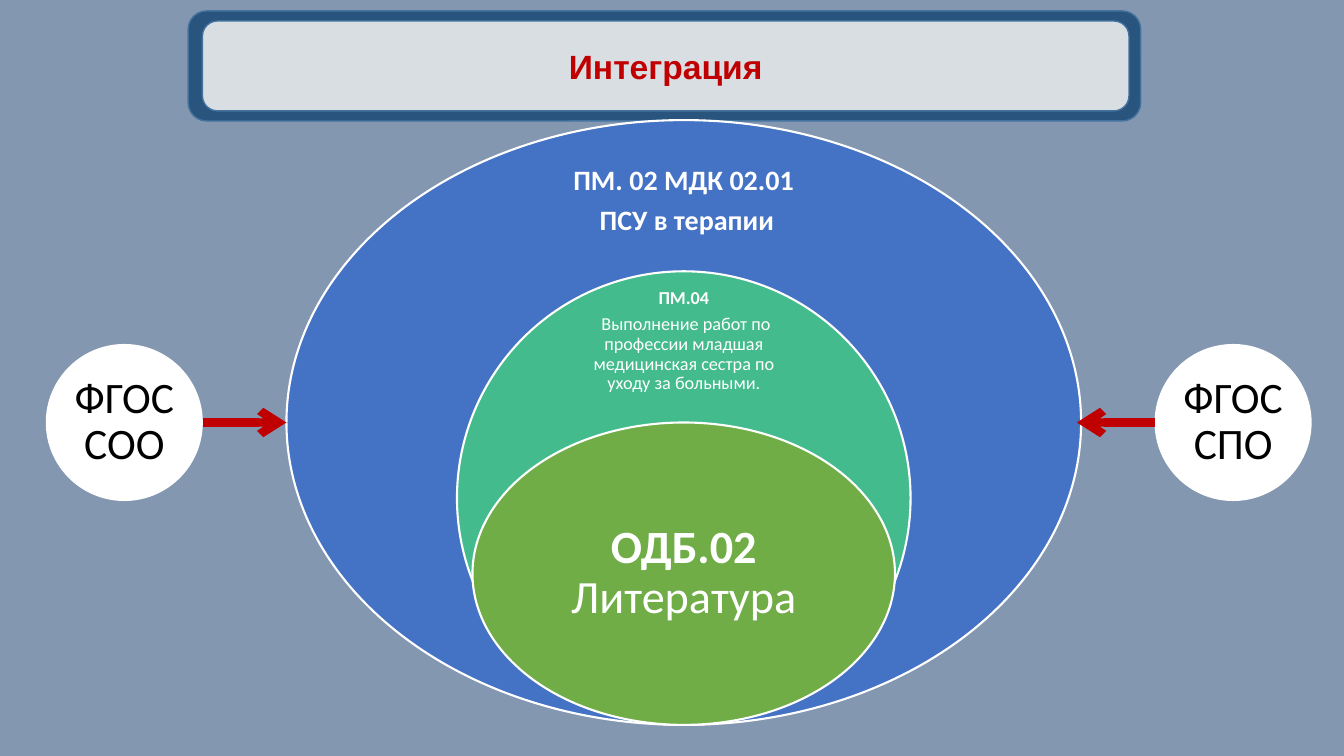
from dataclasses import dataclass

from pptx import Presentation, util as u
from pptx.dml.color import RGBColor
from pptx.enum import shapes, text
from pptx.oxml.ns import qn
from lxml import etree


@dataclass(frozen=True)
class Theme:
    background: str = "8497B0"
    frame: str = "1F4E79"
    panel: str = "F2F2F2"
    frame_line: str = "43739E"
    accent: str = "C00000"
    white: str = "FFFFFF"
    black: str = "000000"
    blue: str = "4472C4"
    teal: str = "43BB8D"
    green: str = "70AD47"
    title_font: str = "Arial"
    body_font: str = "Calibri"
    title_size: int = 24
    outer_size: int = 20
    middle_size: int = 13
    inner_size: int = 33
    standard_size: int = 31


theme = Theme()
COLUMNS, ROWS = 160, 90
CENTER, BOTTOM = 81.4, 86.3
CIRCLE, LABEL = 18.7, 13.2

TITLE = "Интеграция"
FRAME = (22.4, 1.3, 113.4, 13.1)
PANEL = (24.1, 2.5, 110.3, 10.7)
RINGS = [
    dict(width=94.6, height=72, fill=theme.blue, label=(17.9, 33.1, 10.8),
         size=theme.outer_size, inset=1.9, anchor="TOP",
         paras=[[("ПМ. 02 МДК 02.01", True)], [(" ПСУ в терапии", True)]]),
    dict(width=54, height=54, fill=theme.teal, label=(35.6, 25.2, 10.1),
         size=theme.middle_size, inset=1.2, anchor="MIDDLE",
         paras=[[("ПМ.04", True)],
                [(" ", True), ("Выполнение работ по профессии младшая "
                               "медицинская сестра по уходу за больными.", False)]]),
    dict(width=50.3, height=36, fill=theme.green, label=(59.3, 35.6, 18),
         size=theme.inner_size, inset=3.1, anchor="MIDDLE",
         paras=[[("ОДБ.02", True), (" Литература", False)]]),
]
STANDARDS = [
    dict(name="ФГОС СОО", center=14.8, side=1, tip=34.1),
    dict(name="ФГОС СПО", center=146.8, side=-1, tip=128.2),
]

deck = Presentation()
deck.slide_width, deck.slide_height = u.Inches(13.33), u.Inches(7.5)
page = deck.slides.add_slide(deck.slide_layouts[5])
page.background.fill.solid()
page.background.fill.fore_color.rgb = RGBColor.from_string(theme.background)


def place(left, top, width, height):
    across, down = deck.slide_width / COLUMNS, deck.slide_height / ROWS
    return [round(v) for v in (left * across, top * down, width * across, height * down)]


def centered(x, y, width, height):
    return x - width / 2, y - height / 2, width, height


def draw(kind, area, fill, line=None, weight=1, opacity=100):
    shape = page.shapes.add_shape(kind, *place(*area))
    shape.shadow.inherit = False
    shape.fill.solid()
    shape.fill.fore_color.rgb = RGBColor.from_string(fill)
    if opacity < 100:
        color = shape._element.spPr.find(qn("a:solidFill"))[0]
        etree.SubElement(color, qn("a:alpha"), val=str(opacity * 1000))
    if line:
        shape.line.color.rgb = RGBColor.from_string(line)
        shape.line.width = u.Pt(weight)
    else:
        shape.line.fill.background()
    return shape


def write(box, paras, *, size, color, inset, font=theme.body_font,
          anchor="MIDDLE", spacing=0.9, after=0.35):
    frame = box.text_frame
    frame.word_wrap = True
    frame.auto_size = text.MSO_AUTO_SIZE.NONE
    frame.vertical_anchor = text.MSO_ANCHOR[anchor]
    margin = place(inset, 0, 0, 0)[0]
    frame.margin_left = frame.margin_right = margin
    frame.margin_top = frame.margin_bottom = margin
    for index, spans in enumerate(paras):
        para = frame.add_paragraph() if index else frame.paragraphs[0]
        para.alignment = text.PP_ALIGN.CENTER
        para.line_spacing = spacing
        para.space_after = u.Pt(size * after)
        for words, bold in spans:
            span = para.add_run()
            span.text = words
            span.font.name, span.font.size, span.font.bold = font, u.Pt(size), bold
            span.font.color.rgb = RGBColor.from_string(color)


def draw_arrow(start, tip, y):
    x1, y1, x2, _ = place(start, y, tip, 0)
    arrow = page.shapes.add_connector(shapes.MSO_CONNECTOR.STRAIGHT, x1, y1, x2, y1)
    arrow.line.color.rgb = RGBColor.from_string(theme.accent)
    arrow.line.width = u.Pt(6)
    etree.SubElement(arrow.line._get_or_add_ln(), qn("a:tailEnd"), type="arrow")
    etree.SubElement(arrow._element.spPr, qn("a:effectLst"))


def build():
    preset = shapes.MSO_SHAPE
    draw(preset.ROUNDED_RECTANGLE, FRAME, theme.frame, theme.frame_line, opacity=91)
    draw(preset.ROUNDED_RECTANGLE, PANEL, theme.panel, theme.frame_line, opacity=88)
    title = page.shapes.title
    title.left, title.top, title.width, title.height = place(*PANEL)
    page.shapes._spTree.append(title._element)
    write(title, [[(TITLE, True)]], size=theme.title_size, color=theme.accent,
          inset=1.2, font=theme.title_font, spacing=1, after=0)

    for ring in RINGS:
        area = (CENTER - ring["width"] / 2, BOTTOM - ring["height"],
                ring["width"], ring["height"])
        draw(preset.OVAL, area, ring["fill"], theme.white, 1.5)
        top, width, height = ring["label"]
        box = page.shapes.add_textbox(*place(CENTER - width / 2, top, width, height))
        write(box, ring["paras"], size=ring["size"], color=theme.white,
              inset=ring["inset"], anchor=ring["anchor"])

    middle = BOTTOM - RINGS[0]["height"] / 2
    for item in STANDARDS:
        draw(preset.OVAL, centered(item["center"], middle, CIRCLE, CIRCLE), theme.white)
        label = draw(preset.RECTANGLE, centered(item["center"], middle, LABEL, LABEL),
                     theme.white)
        write(label, [[(item["name"], False)]], size=theme.standard_size,
              color=theme.black, inset=0.5)
        draw_arrow(item["center"] + item["side"] * CIRCLE / 2, item["tip"], middle)


if __name__ == "__main__":
    build()
    deck.save("out.pptx")
